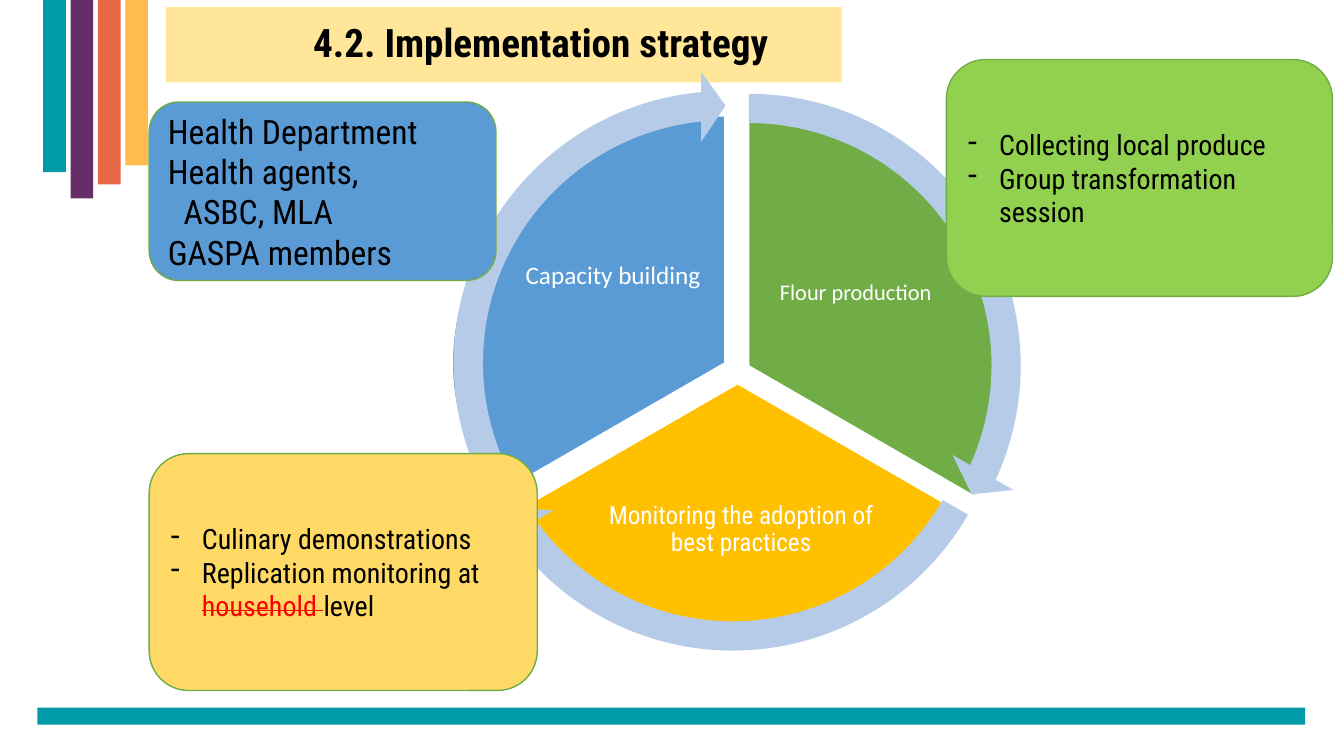
from lxml.etree import SubElement
from pptx import Presentation
from pptx.dml.color import RGBColor
from pptx.enum.shapes import MSO_SHAPE
from pptx.enum.text import MSO_ANCHOR, PP_ALIGN
from pptx.oxml.ns import qn
from pptx.util import Cm, Pt

BLACK = RGBColor(0x00, 0x00, 0x00)
WHITE = RGBColor(0xFF, 0xFF, 0xFF)
RED = RGBColor(0xFF, 0x00, 0x00)
TEAL = RGBColor(0x00, 0x9B, 0xA7)
PURPLE = RGBColor(0x66, 0x2E, 0x68)
CORAL = RGBColor(0xE9, 0x68, 0x48)
AMBER = RGBColor(0xFF, 0xBB, 0x4D)
CREAM = RGBColor(0xFF, 0xE6, 0x99)
GREEN = RGBColor(0x70, 0xAD, 0x47)
GOLD = RGBColor(0xFF, 0xC0, 0x00)
BLUE = RGBColor(0x5B, 0x9B, 0xD5)
PALE_BLUE = RGBColor(0xB5, 0xCB, 0xE7)
LIME = RGBColor(0x92, 0xD0, 0x50)
YELLOW = RGBColor(0xFF, 0xD9, 0x66)

CONDENSED = "Roboto Condensed"
DEGREE = 0.6  # one degree in adjustment units


def apply(target, values):
    for name, value in values.items():
        setattr(target, name, value)


class StrategySlide:
    """Holds the style and the current slide; box is left, top, width, height in cm."""

    def __init__(self, slide):
        self.slide = slide
        self.label_frame = {"word_wrap": True, "vertical_anchor": MSO_ANCHOR.MIDDLE,
                            **{f"margin_{side}": Cm(0.07)
                               for side in ("left", "top", "right", "bottom")}}
        self.centred = {"alignment": PP_ALIGN.CENTER, "line_spacing": 0.9}

    def block(self, kind, box, fill, outline=None, adjustments=()):
        shape = self.slide.shapes.add_shape(kind, *map(Cm, box))
        shape.shadow.inherit = False
        shape.fill.solid()
        shape.fill.fore_color.rgb = fill
        if outline is None:
            shape.line.fill.background()
        else:
            shape.line.color.rgb = outline
            shape.line.width = Pt(1)
        for index, value in enumerate(adjustments):
            shape.adjustments[index] = value
        return shape

    def words(self, paragraph, text, size, color=BLACK, font=CONDENSED, bold=False):
        run = paragraph.add_run()
        run.text = text
        apply(run.font, {"size": Pt(size), "name": font, "bold": bold})
        run.font.color.rgb = color
        return run

    def title(self, text, box):
        frame = self.block(MSO_SHAPE.RECTANGLE, box, CREAM).text_frame
        apply(frame, {"word_wrap": True, "margin_left": Cm(2.1),
                      "vertical_anchor": MSO_ANCHOR.MIDDLE})
        apply(frame.paragraphs[0], self.centred)
        self.words(frame.paragraphs[0], text, 28, bold=True)

    def label(self, text, box, size, font):
        frame = self.slide.shapes.add_textbox(*map(Cm, box)).text_frame
        apply(frame, self.label_frame)
        apply(frame.paragraphs[0], self.centred)
        self.words(frame.paragraphs[0], text, size, WHITE, font)

    def sector(self, box, start, end, fill):
        self.block(MSO_SHAPE.PIE, box, fill, WHITE, (start * DEGREE, end * DEGREE))

    def arrow(self, left, top, start, end):
        self.block(MSO_SHAPE.CIRCULAR_ARROW, (left, top, 14.73, 14.73), PALE_BLUE,
                   adjustments=(0.05, 3.28, end * DEGREE, start * DEGREE, 0.06))

    def card(self, box, fill, size, lines, bulleted=True):
        """A line is (left indent in cm, [(text, struck out), ...])."""
        frame = self.block(MSO_SHAPE.ROUNDED_RECTANGLE, box, fill, GREEN).text_frame
        apply(frame, {"word_wrap": True, "vertical_anchor": MSO_ANCHOR.MIDDLE})
        for number, (indent, parts) in enumerate(lines):
            paragraph = frame.add_paragraph() if number else frame.paragraphs[0]
            paragraph.alignment = PP_ALIGN.LEFT
            properties = paragraph._p.get_or_add_pPr()
            properties.set("marL", str(Cm(indent)))
            if bulleted:
                properties.set("indent", str(-Cm(indent)))
                SubElement(properties, qn("a:buFontTx"))
                SubElement(properties, qn("a:buChar")).set("char", "-")
            for text, struck in parts:
                run = self.words(paragraph, text, size, RED if struck else BLACK)
                if struck:
                    run.font._element.set("strike", "sngStrike")


def main():
    presentation = Presentation()
    apply(presentation, {"slide_width": Cm(33.87), "slide_height": Cm(19.05)})
    strategy = StrategySlide(presentation.slides.add_slide(presentation.slide_layouts[6]))

    # Footer bar and corner stripes
    strategy.block(MSO_SHAPE.RECTANGLE, (0.94, 17.83, 31.95, 0.43), TEAL)
    stripes = ((TEAL, 4.34), (PURPLE, 5), (CORAL, 4.65), (AMBER, 4.17))
    for position, (color, height) in enumerate(stripes):
        strategy.block(MSO_SHAPE.RECTANGLE, (1.09 + 0.69 * position, 0, 0.57, height), color)

    strategy.title("4.2. Implementation strategy", (4.19, 0.18, 17.02, 1.9))

    # Three sectors of the cycle with their labels
    strategy.sector((12.32, 2.67, 13.1, 13.1), 270, 30, GREEN)
    strategy.label("Flour production", (19.23, 5.44, 4.67, 3.91), 16, "Calibri")
    strategy.sector((12.04, 3.12, 13.1, 13.1), 30, 150, GOLD)
    strategy.label("Monitoring the adoption of best practices",
                   (15.16, 11.63, 7.04, 3.43), 18, CONDENSED)
    strategy.sector((11.4, 2.92, 13.74, 12.45), 150, 270, BLUE)
    strategy.label("Capacity building", (13, 5.11, 4.9, 3.71), 18, "Calibri")

    # Arrows around the cycle
    strategy.arrow(11.51, 1.85, 270, 24.54)
    strategy.arrow(11.1, 2.18, 30, 144.53)
    strategy.arrow(10.92, 1.78, 150, 264.55)

    # Cards beside the sectors
    strategy.card((3.76, 2.57, 8.74, 4.5), BLUE, 24, [
        (0, [("Health Department", False)]),
        (0, [("Health agents,", False)]),
        (0.4, [("ASBC, MLA", False)]),
        (0, [("GASPA members", False)]),
    ], bulleted=False)
    strategy.card((23.85, 1.5, 9.73, 5.97), LIME, 20, [
        (0.79, [("Collecting local produce", False)]),
        (0.79, [("Group transformation session", False)]),
    ])
    strategy.card((3.76, 11.43, 9.78, 5.97), YELLOW, 20, [
        (0.79, [("Culinary demonstrations", False)]),
        (0.79, [("Replication monitoring at ", False), ("household ", True), ("level", False)]),
    ])

    presentation.save("out.pptx")


if __name__ == "__main__":
    main()
